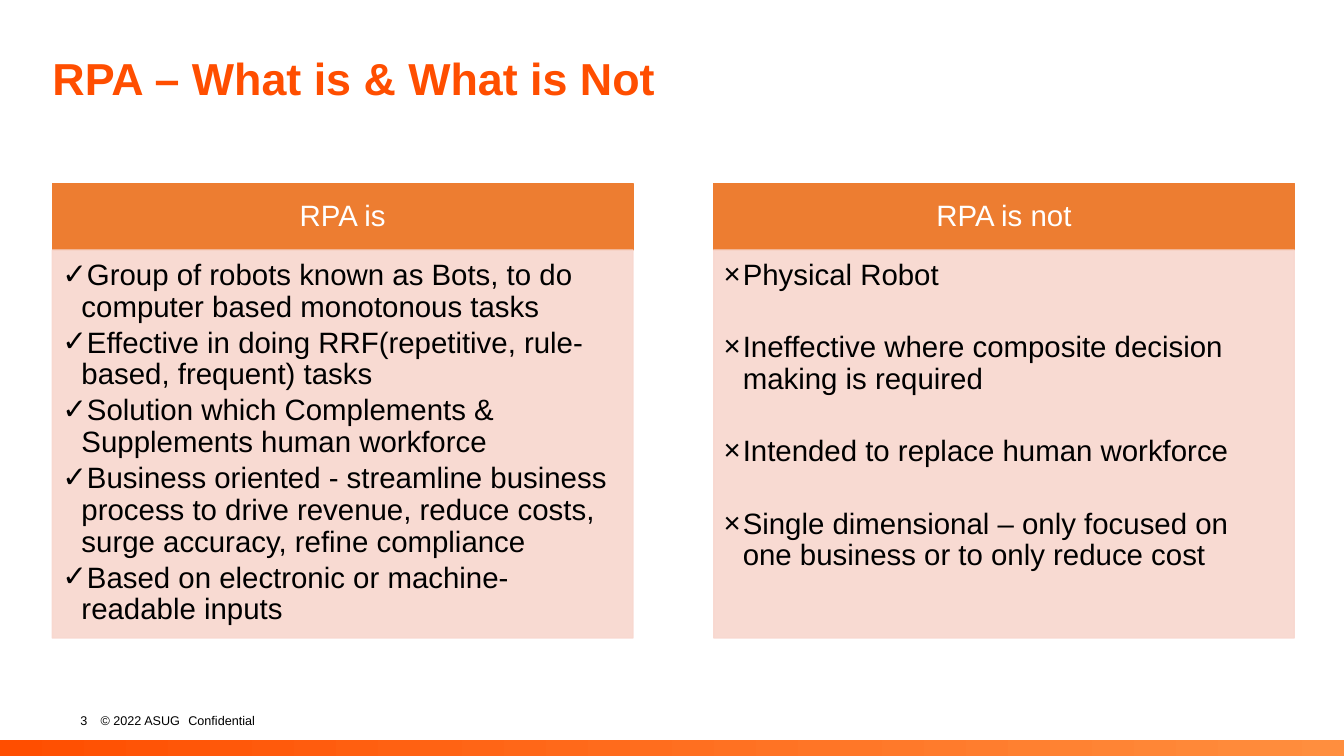
from pptx import Presentation as Deck
from pptx.dml.color import RGBColor as Rgb
from pptx.enum.shapes import MSO_SHAPE as Kind
from pptx.enum.text import MSO_ANCHOR as Anchor, PP_ALIGN as Align
from pptx.oxml.ns import qn
from pptx.util import Inches, Pt
from lxml.etree import SubElement as Sub

BRAND, HEAD, BODY = "FF4E00", "ED7D31", "F8D7CE"
LEFT, WIDE, STEP = 3.9, 43.2, 49.2
TOP, BAR, TALL = 24.27, 8.8, 51.33

PANELS = [
    ("RPA is", "✓", 3, [
        "Group of robots known as Bots, to do computer based monotonous tasks",
        "Effective in doing RRF(repetitive, rule-based, frequent) tasks",
        "Solution which Complements & Supplements human workforce",
        "Business oriented - streamline business process to drive revenue, "
        "reduce costs, surge accuracy, refine compliance",
        "Based on electronic or machine-readable inputs",
    ]),
    ("RPA is not", "×", 29, [
        "Physical Robot",
        "Ineffective where composite decision making is required",
        "Intended to replace human workforce",
        "Single dimensional – only focused on one business or to only reduce cost",
    ]),
]


def tint(code):
    return Rgb.from_string(code)


def write(frame, lines, size=21, color="000000", bold=False, align=Align.LEFT,
          anchor=Anchor.TOP, inset=(0.1, 0.05, 0.1, 0.05), lead=0.9, gap=0,
          mark=None, tabs=()):
    frame.word_wrap = True
    frame.vertical_anchor = anchor
    (frame.margin_left, frame.margin_top,
     frame.margin_right, frame.margin_bottom) = map(Inches, inset)
    for i, line in enumerate(lines):
        para = frame.add_paragraph() if i else frame.paragraphs[0]
        para.alignment, para.line_spacing = align, lead
        para.space_after = Pt(gap)
        props = para._p.get_or_add_pPr()
        if mark:
            props.set("marL", str(Inches(0.19)))
            props.set("indent", str(-Inches(0.19)))
            Sub(props, qn("a:buFont"), typeface="Arial")
            Sub(props, qn("a:buChar"), char=mark)
        if tabs:
            stops = Sub(props, qn("a:tabLst"))
            for stop in tabs:
                Sub(stops, qn("a:tab"), pos=str(Inches(stop)), algn="l")
        run = para.add_run()
        run.text = line
        font = run.font
        font.name, font.size, font.bold = "Arial", Pt(size), bold
        font.color.rgb = tint(color)


class Page:
    """Draws styled elements on one slide, placed in percent of its size."""

    def __init__(self):
        self.deck = Deck()
        self.deck.slide_width, self.deck.slide_height = Inches(13.33), Inches(7.5)
        self.slide = self.deck.slides.add_slide(self.deck.slide_layouts[6])

    def place(self, x, y, w, h):
        across, down = self.deck.slide_width / 100, self.deck.slide_height / 100
        return [int(n) for n in (x * across, y * down, w * across, h * down)]

    def text(self, area, lines, **style):
        box = self.slide.shapes.add_textbox(*self.place(*area))
        write(box.text_frame, lines, **style)

    def rect(self, area):
        shape = self.slide.shapes.add_shape(Kind.RECTANGLE, *self.place(*area))
        shape.shadow.inherit = False
        return shape

    def block(self, area, fill, lines, alpha=100, **style):
        shape = self.rect(area)
        shape.fill.solid()
        shape.fill.fore_color.rgb = tint(fill)
        shape.line.color.rgb = tint(fill)
        shape.line.width = Pt(1)
        if alpha < 100:
            for node in shape._element.spPr.iter(qn("a:srgbClr")):
                Sub(node, qn("a:alpha"), val=str(alpha * 1000))
        write(shape.text_frame, lines, **style)

    def fade(self, area, start, end):
        shape = self.rect(area)
        shape.fill.gradient()
        shape.fill.gradient_angle = 0
        for stop, code in zip(shape.fill.gradient_stops, (start, end)):
            stop.color.rgb = tint(code)
        shape.line.fill.background()


def main():
    page = Page()
    page.fade((0, 97.87, 100, 2.13), BRAND, "FF8E3E")
    page.text((5.25, 93.6, 21.5, 3.33), ["3\t© 2022 ASUG\tConfidential"],
              size=9, lead=1, tabs=(0.2, 1.07))
    page.text((LEFT, 7.47, 92.4, 8.53), ["RPA – What is & What is Not"],
              size=32, color=BRAND, bold=True, inset=(0, 0, 0, 0))
    for i, (title, mark, gap, points) in enumerate(PANELS):
        x = LEFT + i * STEP
        page.block((x, TOP, WIDE, BAR), HEAD, [title], color="FFFFFF",
                   align=Align.CENTER, anchor=Anchor.MIDDLE,
                   inset=(0.11, 0.06, 0.11, 0.06))
        page.block((x, TOP + BAR, WIDE, TALL), BODY, points, alpha=90,
                   inset=(0.1, 0.1, 0.14, 0.16), gap=gap, mark=mark)
    page.deck.save("out.pptx")


if __name__ == "__main__":
    main()
